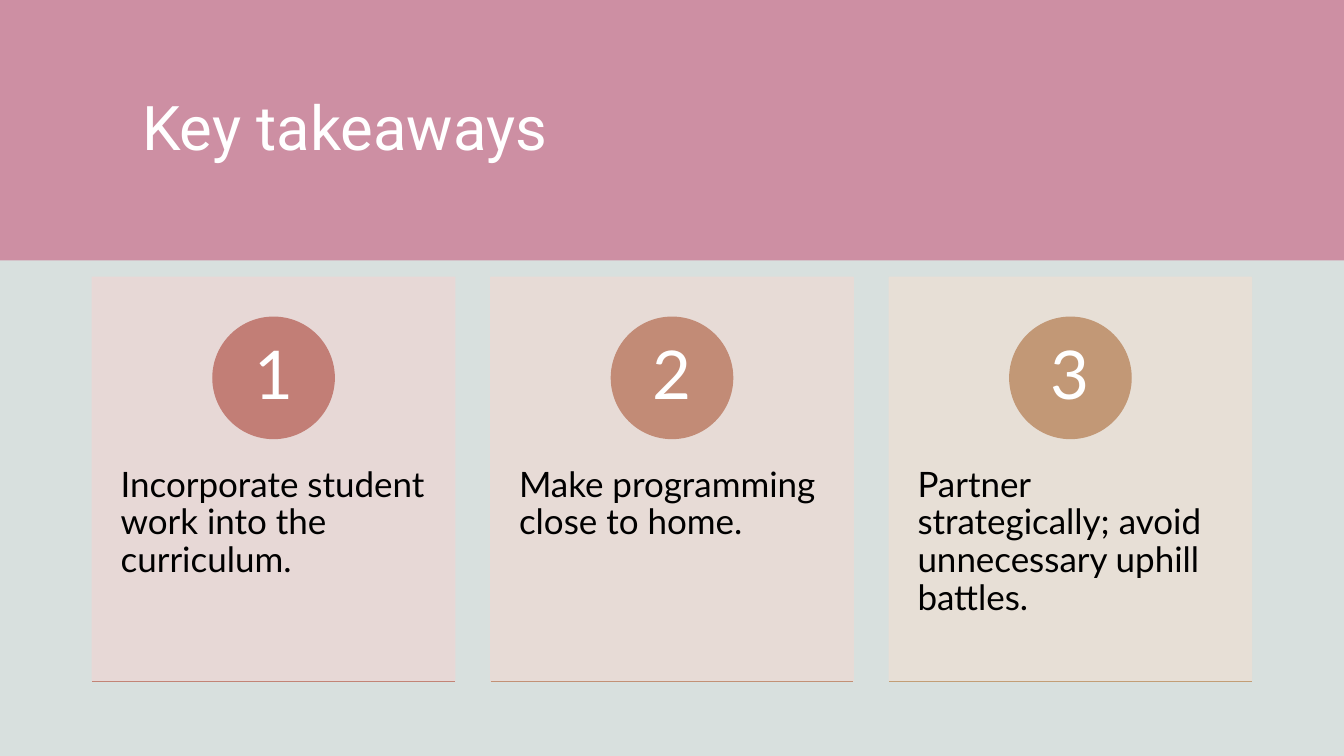
"""Build the "Key takeaways" slide: a title band above three numbered cards."""
from dataclasses import dataclass

from lxml import etree
from pptx import Presentation
from pptx.dml.color import RGBColor
from pptx.enum.shapes import MSO_CONNECTOR, MSO_SHAPE
from pptx.enum.text import MSO_ANCHOR, PP_ALIGN
from pptx.oxml.ns import qn
from pptx.util import Pt

RECTANGLE, OVAL = MSO_SHAPE.RECTANGLE, MSO_SHAPE.OVAL
STRAIGHT = MSO_CONNECTOR.STRAIGHT
TOP, MIDDLE = MSO_ANCHOR.TOP, MSO_ANCHOR.MIDDLE
LEFT, CENTER = PP_ALIGN.LEFT, PP_ALIGN.CENTER


@dataclass(frozen=True)
class Theme:
    veil: str = "C8D4D0"
    band: str = "CD8FA3"
    light: str = "FFFFFF"
    ink: str = "000000"
    title_font: str = "Roboto"
    body_font: str = "Lato"
    title_size: float = 44
    number_size: float = 48
    body_size: float = 25


theme = Theme()
SLIDE_W, SLIDE_H = 960, 540
BAND_H = 186
CARD_LEFT, CARD_TOP, CARD_W, CARD_H = 66, 198, 258.8, 288.6
CARD_STEP = 284.6
BADGE_TOP, BADGE_SIZE = 226.6, 86.6
BODY_TOP, BODY_H = 307.6, 173

takeaways = [
    ("Incorporate student work into the curriculum.", "E9D8D6", "C27E76", "C28476"),
    ("Make programming close to home.", "E9DBD6", "C28B76", "C29176"),
    ("Partner strategically; avoid unnecessary uphill battles.",
     "E9DFD6", "C29876", "C29E76"),
]

prs = Presentation()
prs.slide_width, prs.slide_height = Pt(SLIDE_W), Pt(SLIDE_H)
slide = prs.slides.add_slide(prs.slide_layouts[6])


def add_panel(kind, left, top, width, height, color, outlined=False, opacity=100):
    """Add a flat filled shape, optionally outlined and see-through."""
    panel = slide.shapes.add_shape(kind, Pt(left), Pt(top), Pt(width), Pt(height))
    panel.shadow.inherit = False
    panel.fill.solid()
    panel.fill.fore_color.rgb = RGBColor.from_string(color)
    if outlined:
        panel.line.color.rgb = RGBColor.from_string(color)
        panel.line.width = Pt(1)
    else:
        panel.line.fill.background()
    if opacity < 100:
        for paint in panel._element.spPr.iter(qn("a:srgbClr")):
            etree.SubElement(paint, qn("a:alpha"), val=str(opacity * 1000))
    return panel


def write_text(holder, text, font, size, color, inset_x, inset_y,
               anchor=MIDDLE, align=LEFT, spacing=0.9):
    """Put one styled paragraph into a shape or text box."""
    frame = holder.text_frame
    frame.word_wrap = True
    frame.vertical_anchor = anchor
    frame.margin_left = frame.margin_right = Pt(inset_x)
    frame.margin_top = frame.margin_bottom = Pt(inset_y)
    paragraph = frame.paragraphs[0]
    paragraph.text = text
    paragraph.alignment = align
    paragraph.line_spacing = spacing
    paragraph.font.name = font
    paragraph.font.size = Pt(size)
    paragraph.font.color.rgb = RGBColor.from_string(color)


add_panel(RECTANGLE, 0, 0, SLIDE_W, SLIDE_H, theme.veil, opacity=70)
add_panel(RECTANGLE, 0, 0, SLIDE_W, BAND_H, theme.band)

title = slide.shapes.add_textbox(Pt(94.4), Pt(30), Pt(788), Pt(126))
write_text(title, "Key takeaways", theme.title_font, theme.title_size, theme.light,
           7.2, 3.6)

for index, (advice, card_color, badge_color, rule_color) in enumerate(takeaways):
    left = CARD_LEFT + index * CARD_STEP
    bottom = CARD_TOP + CARD_H
    add_panel(RECTANGLE, left, CARD_TOP, CARD_W, CARD_H, card_color,
              outlined=True, opacity=90)

    body = slide.shapes.add_textbox(Pt(left), Pt(BODY_TOP), Pt(CARD_W), Pt(BODY_H))
    write_text(body, advice, theme.body_font, theme.body_size, theme.ink,
               20.2, 25.9, anchor=TOP)

    badge = add_panel(OVAL, left + (CARD_W - BADGE_SIZE) / 2, BADGE_TOP,
                      BADGE_SIZE, BADGE_SIZE, badge_color, outlined=True)
    write_text(badge, str(index + 1), theme.body_font, theme.number_size, theme.light,
               6.8, 0.9, align=CENTER)

    rule = slide.shapes.add_connector(STRAIGHT, Pt(left), Pt(bottom),
                                      Pt(left + CARD_W), Pt(bottom))
    rule.line.color.rgb = RGBColor.from_string(rule_color)
    rule.line.width = Pt(1)
    etree.SubElement(rule._element.spPr, qn("a:effectLst"))

prs.save("out.pptx")
